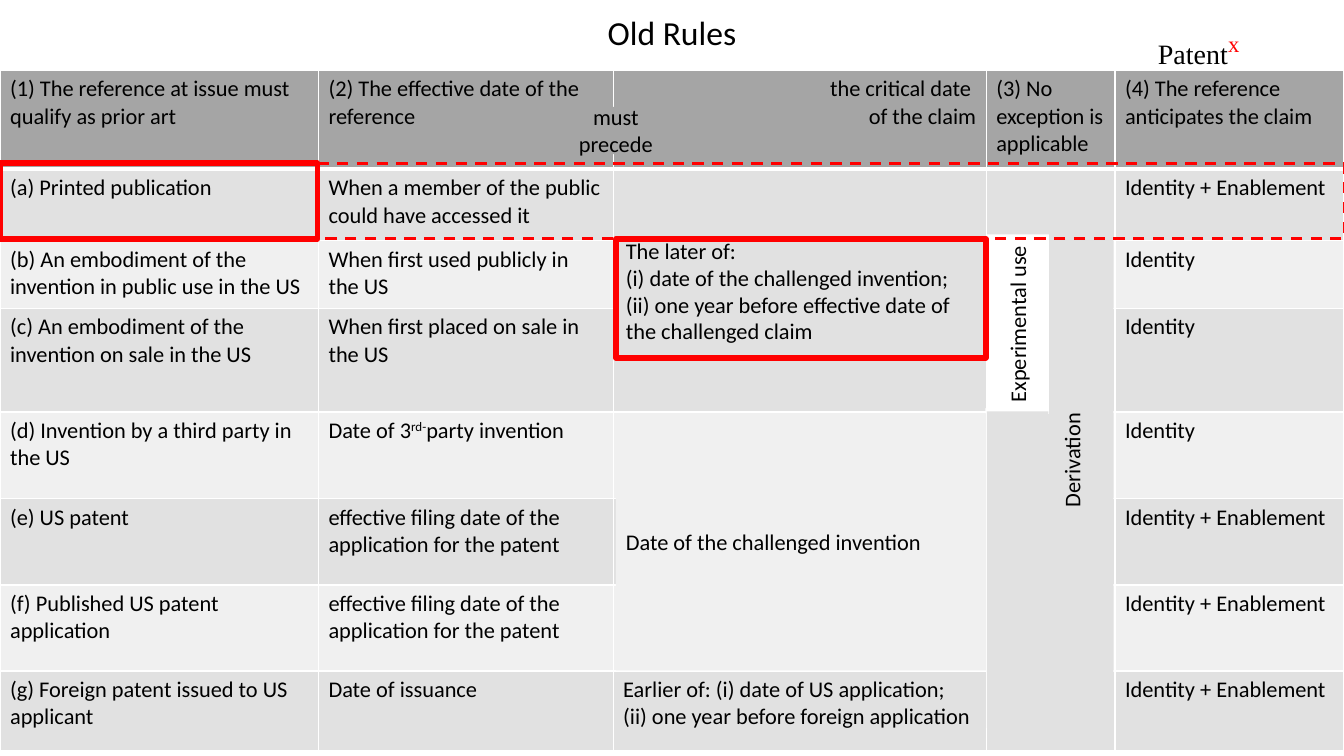
from lxml import etree
from pptx import Presentation
from pptx import util as u
from pptx.dml.color import RGBColor
from pptx.enum import dml, shapes, text
from pptx.oxml import ns

# Content
COLORS = {"ink": "000000", "red": "FF0000", "white": "FFFFFF",
          "header": "A5A5A5", "dark": "E1E1E1", "light": "F0F0F0"}
BODY_FONT, BODY_SIZE = "Calibri", 16
FULL = "Identity + Enablement"
FILING = "effective filing date of the application for the patent"
# Each cell is plain text or a list of (text, superscript) spans
ROWS = [
    ["(1) The reference at issue must qualify as prior art",
     "(2) The effective date of the reference",
     "the critical date \nof the claim",
     "(3) No exception is applicable",
     "(4) The reference anticipates the claim"],
    ["(a) Printed publication",
     "When a member of the public could have accessed it", "", "", FULL],
    ["(b) An embodiment of the invention in public use in the US",
     "When first used publicly in the US", "", "", "Identity"],
    ["(c) An embodiment of the invention on sale in the US",
     "When first placed on sale in the US", "", "", "Identity"],
    ["(d) Invention by a third party in the US",
     [("Date of 3", False), ("rd-", True), ("party invention", False)],
     "", "", "Identity"],
    ["(e) US patent", FILING, "", "", FULL],
    ["(f) Published US patent application", FILING, "", "", FULL],
    ["(g) Foreign patent issued to US applicant", "Date of issuance",
     "Earlier of: (i) date of US application;\v"
     "(ii) one year before foreign application", "", FULL],
]
COLUMN_WIDTHS = [227.5, 210.5, 266.5, 92, 163.5]
ROW_HEIGHTS = [70.5, 51, 48.5, 74, 62, 61.5, 61.5, 57]
TABLE_TOP = 50.4
CENTER, LEFT, RIGHT = text.PP_ALIGN.CENTER, text.PP_ALIGN.LEFT, text.PP_ALIGN.RIGHT

# Panels over the table: left, top, width, height, rotation, fill, align, text
PANELS = [
    (560.2, 298.8, 410.4, 59.8, 270, "dark", CENTER, "Derivation"),
    (662.4, 208.8, 128.2, 45.4, 270, "white", CENTER, "Experimental use"),
    (391.7, 76.3, 96.5, 33.8, 0, "header", CENTER, "must precede"),
    (440, 295.2, 264.2, 183.6, 0, "light", LEFT,
     "Date of the challenged invention"),
    (704.9, 293.8, 43.9, 226.1, 0, "dark", LEFT, ""),
    (440, 123.8, 264.2, 167.8, 0, "dark", LEFT,
     "The later of:\n(i) date of the challenged invention;\v"
     "(ii) one year before effective date of the challenged claim"),
]
# Red frames: left, top, width, height, line width, dashed
FRAMES = [
    (0, 116.6, 960, 54, 2, True),
    (0, 116.6, 226.8, 54, 4, False),
    (440, 170.6, 264.2, 85, 4, False),
]


def rgb(name):
    return RGBColor.from_string(COLORS[name])


def style(font, size=BODY_SIZE, name=BODY_FONT, color="ink"):
    font.size, font.name = u.Pt(size), name
    font.color.rgb = rgb(color)


def raise_span(span):
    span.font._element.set("baseline", "30000")


def write(frame, content, align=LEFT, size=BODY_SIZE):
    frame.word_wrap = True
    frame.text = content
    for para in frame.paragraphs:
        para.alignment = align
        for span in para.runs:
            style(span.font, size)


def add_border(cell, side, width):
    line = etree.SubElement(cell._tc.get_or_add_tcPr(), ns.qn("a:ln" + side),
                            w=str(u.Pt(width)))
    fill = etree.SubElement(line, ns.qn("a:solidFill"))
    etree.SubElement(fill, ns.qn("a:srgbClr"), val=COLORS["white"])


def add_rectangle(page, left, top, width, height):
    box = page.shapes.add_shape(shapes.MSO_SHAPE.RECTANGLE, u.Pt(left),
                                u.Pt(top), u.Pt(width), u.Pt(height))
    box.shadow.inherit = False
    return box


def add_heading(page):
    # Course mark at the top right
    mark = page.shapes.add_textbox(u.Pt(820), u.Pt(14.4), u.Pt(107.3), u.Pt(31.7))
    mark.text_frame.word_wrap = True
    para = mark.text_frame.paragraphs[0]
    for content, size, color in [("Patent", 20, "ink"), ("x", 28, "red")]:
        span = para.add_run()
        span.text = content
        style(span.font, size, "Times New Roman", color)
    raise_span(span)
    # Title
    title = page.shapes.add_textbox(u.Pt(66), u.Pt(5.8), u.Pt(828), u.Pt(37.4))
    write(title.text_frame, "Old Rules", CENTER, 24)
    title.text_frame.vertical_anchor = text.MSO_ANCHOR.MIDDLE
    title.text_frame.paragraphs[0].line_spacing = 0.9


def add_rules_table(page):
    table = page.shapes.add_table(
        len(ROWS), len(COLUMN_WIDTHS), 0, u.Pt(TABLE_TOP),
        u.Pt(sum(COLUMN_WIDTHS)), u.Pt(sum(ROW_HEIGHTS))).table
    table.horz_banding = False
    table.first_row = False
    for column, width in zip(table.columns, COLUMN_WIDTHS):
        column.width = u.Pt(width)
    for r, contents in enumerate(ROWS):
        table.rows[r].height = u.Pt(ROW_HEIGHTS[r])
        shade = "header" if r == 0 else "dark" if r % 2 else "light"
        for c, content in enumerate(contents):
            cell = table.cell(r, c)
            widths = {"L": 1, "R": 1, "T": 3 if r == 1 else 1,
                      "B": 3 if r == 0 else 1}
            for side, width in widths.items():
                add_border(cell, side, width)
            cell.fill.solid()
            cell.fill.fore_color.rgb = rgb(shade)
            if isinstance(content, str):
                write(cell.text_frame, content, RIGHT if (r, c) == (0, 2) else LEFT)
                continue
            for piece, raised in content:
                span = cell.text_frame.paragraphs[0].add_run()
                span.text = piece
                style(span.font)
                if raised:
                    raise_span(span)


def add_overlays(page):
    # Filled panels that span several cells
    for left, top, width, height, turn, shade, align, content in PANELS:
        box = add_rectangle(page, left, top, width, height)
        box.rotation = turn
        box.fill.solid()
        box.fill.fore_color.rgb = rgb(shade)
        box.line.fill.background()
        if content:
            write(box.text_frame, content, align)
            box.text_frame.vertical_anchor = text.MSO_ANCHOR.MIDDLE
    # Red highlight frames
    for left, top, width, height, weight, dashed in FRAMES:
        box = add_rectangle(page, left, top, width, height)
        box.fill.background()
        box.line.color.rgb = rgb("red")
        box.line.width = u.Pt(weight)
        if dashed:
            box.line.dash_style = dml.MSO_LINE.DASH


def main():
    deck = Presentation()
    deck.slide_width, deck.slide_height = u.Pt(960), u.Pt(540)
    page = deck.slides.add_slide(deck.slide_layouts[6])
    add_heading(page)
    add_rules_table(page)
    add_overlays(page)
    deck.save("out.pptx")


if __name__ == "__main__":
    main()
